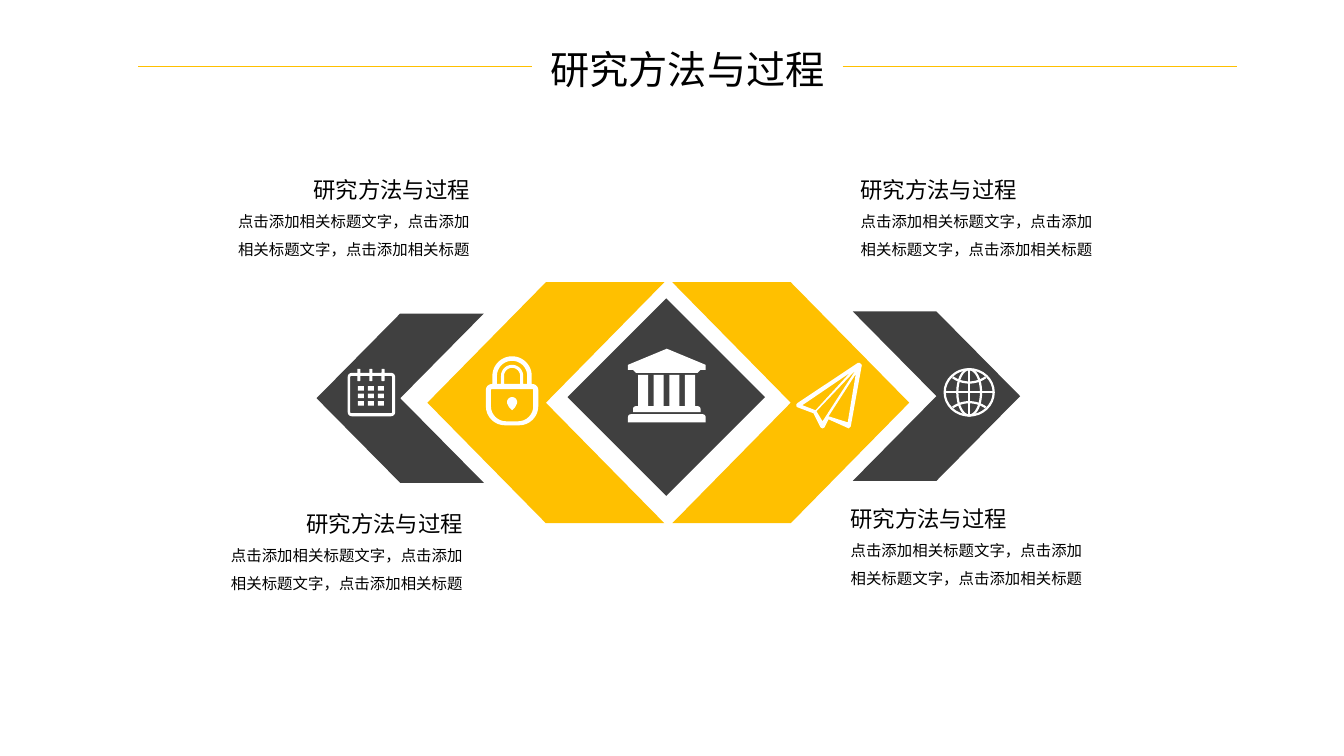
from math import cos, radians, sin

from lxml import etree
from pptx import Presentation
from pptx import util as u
from pptx.dml.color import RGBColor
from pptx.enum import shapes, text
from pptx.oxml.ns import qn

GOLD = RGBColor(0xFF, 0xC0, 0x00)
CHARCOAL = RGBColor(0x40, 0x40, 0x40)
WHITE = RGBColor(0xFF, 0xFF, 0xFF)
BLACK = RGBColor(0x00, 0x00, 0x00)

HEAD_FONT = "Noto Sans CJK JP"
BODY_FONT = "Noto Sans CJK SC"
COLUMNS, ROWS = 133.33, 75
HEADING = "研究方法与过程"
BODY = "点击添加相关标题文字，点击添加相关标题文字，点击添加相关标题"
LEFT, CENTER, RIGHT = text.PP_ALIGN.LEFT, text.PP_ALIGN.CENTER, text.PP_ALIGN.RIGHT
PRESET = shapes.MSO_SHAPE


def arc(cx, cy, rx, ry, start=0, end=360, steps=32):
    """Points along an ellipse; angles run clockwise from the right."""
    angles = [radians(start + (end - start) * i / steps) for i in range(steps + 1)]
    return [(cx + rx * cos(a), cy + ry * sin(a)) for a in angles]


def box(x0, y0, x1, y1):
    return [(x0, y0), (x1, y0), (x1, y1), (x0, y1)]


def rounded(x0, y0, x1, y1, top, bottom):
    """Box with separate corner radii for its top and bottom."""
    return (arc(x0 + top, y0 + top, top, top, 180, 270, 8)
            + arc(x1 - top, y0 + top, top, top, 270, 360, 8)
            + arc(x1 - bottom, y1 - bottom, bottom, bottom, 0, 90, 8)
            + arc(x0 + bottom, y1 - bottom, bottom, bottom, 90, 180, 8))


def arch(cx, cy, radius, foot):
    return arc(cx, cy, radius, radius, 180, 360) + [(cx + radius, foot), (cx - radius, foot)]


class Deck:
    """Style and current slide; places count in columns and rows."""

    def __init__(self):
        self.prs = Presentation()
        self.prs.slide_width, self.prs.slide_height = u.Inches(13.33), u.Inches(7.5)
        self.s = self.prs.slides.add_slide(self.prs.slide_layouts[5])

    def x(self, columns):
        return round(self.prs.slide_width * columns / COLUMNS)

    def y(self, rows):
        return round(self.prs.slide_height * rows / ROWS)

    def place(self, left, top, width, height):
        return self.x(left), self.y(top), self.x(width), self.y(height)

    def paragraph(self, p, words, size, font, align, spacing=None):
        p.text, p.alignment, p.line_spacing = words, align, spacing
        p.font.size, p.font.name = u.Pt(size), font
        p.font.color.rgb = BLACK
        props = p.font._element if hasattr(p.font, "_element") else p.font._rPr
        etree.SubElement(props, qn("a:ea")).set("typeface", font)

    def title(self, words, *cells):
        sp = self.s.shapes.title
        sp.left, sp.top, sp.width, sp.height = self.place(*cells)
        tf = sp.text_frame
        tf.auto_size = text.MSO_AUTO_SIZE.NONE
        tf.vertical_anchor = text.MSO_ANCHOR.MIDDLE
        self.paragraph(tf.paragraphs[0], words, 28, HEAD_FONT, CENTER)

    def caption(self, left, top, align):
        tf = self.s.shapes.add_textbox(*self.place(left, top, 25.5, 8.9)).text_frame
        tf.word_wrap = True
        tf.auto_size = text.MSO_AUTO_SIZE.SHAPE_TO_FIT_TEXT
        self.paragraph(tf.paragraphs[0], HEADING, 16, HEAD_FONT, align)
        self.paragraph(tf.add_paragraph(), BODY, 11, BODY_FONT, align, 1.5)

    def paint(self, sp, color):
        sp.shadow.inherit = False
        sp.fill.solid()
        sp.fill.fore_color.rgb = color
        sp.line.fill.background()

    def shape(self, preset, color, *cells, rotation=0):
        sp = self.s.shapes.add_shape(preset, *self.place(*cells))
        sp.rotation = rotation
        self.paint(sp, color)

    def icon(self, left, top, contours, stroke=None):
        """Contours in hundredths of an inch; nested ones cut holes, a stroke leaves them open."""
        builder = None
        for contour in contours:
            points = [(px * 100, py * 100) for px, py in contour]
            if builder is None:
                builder = self.s.shapes.build_freeform(*points[0], scale=u.Inches(1) / 10000)
            else:
                builder.move_to(*points[0])
            builder.add_line_segments(points[1:], close=stroke is None)
        sp = builder.convert_to_shape(self.x(left), self.y(top))
        self.paint(sp, WHITE)
        if stroke:
            sp.fill.background()
            sp.line.color.rgb, sp.line.width = WHITE, u.Pt(stroke)

    def rule(self, start, end, row):
        line = self.s.shapes.add_connector(shapes.MSO_CONNECTOR.STRAIGHT, self.x(start),
                                           self.y(row), self.x(end), self.y(row))
        line.line.color.rgb, line.line.width = GOLD, u.Pt(0.5)
        etree.SubElement(line._element.spPr, qn("a:effectLst"))


def draw_temple(deck):
    roof = [(38.5, 0), (77, 16), (77, 21), (72, 21), (69, 24),
            (8, 24), (5, 21), (0, 21), (0, 16)]
    columns = [box(x, 26, x + 10, 57) for x in (10, 25.5, 41, 56.5)]
    plinth = rounded(5, 57, 72, 63, 3, 0)
    base = rounded(0, 65, 77, 73, 3, 0)
    deck.icon(62.3, 34.6, [roof, *columns, plinth, base])


def draw_lock(deck):
    shackle = [arch(26, 20, r, 28) for r in (19.5, 15, 11, 8)]
    body = [rounded(0, 28, 52, 69, 6, 19), rounded(5, 33, 47, 65, 1, 15)]
    keyhole = arc(26, 46, 5, 5, 160, 380) + [(29, 51), (26, 54), (23, 51)]
    deck.icon(48.2, 35.3, shackle + body + [keyhole])


def draw_plane(deck):
    outline = [(61, 0), (63, 0), (65, 2), (54, 63), (52, 65), (32, 56), (28, 64),
               (26, 65), (24, 64), (17, 50), (1, 44), (0, 43), (0, 41), (1, 40)]
    folds = [[(6, 42), (53, 10), (19, 47)],
             [(20, 48), (59, 7), (26, 58)],
             [(51, 59), (32, 53), (59, 11)]]
    deck.icon(79, 36, [outline, *folds])


def draw_calendar(deck):
    deck.icon(34.5, 36.6, [rounded(0, 4, 47, 47, 4, 4), rounded(2.5, 7, 44, 44, 1, 1)])
    for column in range(3):
        deck.shape(PRESET.ROUNDED_RECTANGLE, WHITE, 35.45 + 1.2 * column, 36.6, 0.3, 1.2)
        for row in range(3):
            deck.shape(PRESET.RECTANGLE, WHITE, 35.5 + column, 38.3 + 0.75 * row, 0.6, 0.45)


def draw_globe(deck):
    cx, cy, rx, ry = 25.5, 24.3, 24.3, 23
    deck.icon(93.6, 36.5, [
        arc(cx, cy, rx, ry), arc(cx, cy, 11.8, ry),
        [(cx - rx, cy), (cx + rx, cy)], [(cx, cy - ry), (cx, cy + ry)],
        arc(cx, -14, 28.5, 28.5, 55, 125), arc(cx, 62.6, 28.5, 28.5, 235, 305),
    ], stroke=1.6)


def main():
    deck = Deck()
    deck.title(HEADING, 52.8, 4, 30.8, 5.7)
    for start, end in ((13.7, 52.8), (83.6, 122.7)):
        deck.rule(start, end, 6.6)

    deck.shape(PRESET.CHEVRON, GOLD, 66.7, 28, 23.5, 23.9)
    deck.shape(PRESET.CHEVRON, CHARCOAL, 84.6, 30.9, 16.6, 16.8)
    deck.shape(PRESET.CHEVRON, GOLD, 42.4, 28, 23.5, 23.9, rotation=180)
    deck.shape(PRESET.CHEVRON, CHARCOAL, 31.4, 31.1, 16.6, 16.8, rotation=180)
    deck.shape(PRESET.DIAMOND, CHARCOAL, 56.3, 29.6, 19.6, 19.6)

    for draw in (draw_temple, draw_lock, draw_plane, draw_calendar, draw_globe):
        draw(deck)

    for left, top, align in ((21.4, 50.1, RIGHT), (22.1, 17, RIGHT),
                             (83.4, 49.6, LEFT), (84.4, 17, LEFT)):
        deck.caption(left, top, align)
    deck.prs.save("out.pptx")


if __name__ == "__main__":
    main()
